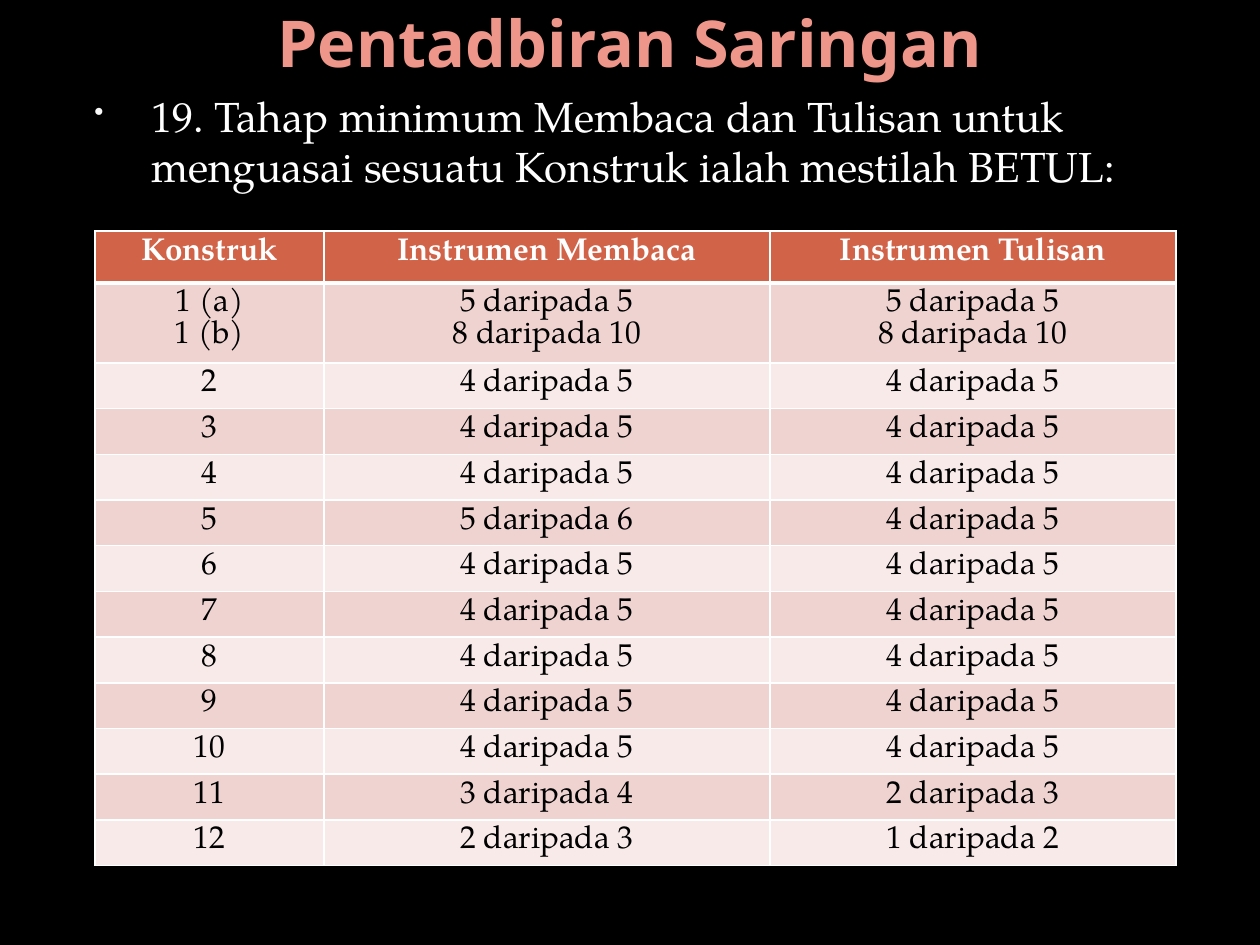
from lxml import etree
from pptx import Presentation
from pptx import util as u
from pptx.dml.color import RGBColor
from pptx.enum import text
from pptx.oxml.ns import qn

# Content
TITLE = "Pentadbiran Saringan"
BODY = ("19. Tahap minimum Membaca dan Tulisan untuk menguasai "
        "sesuatu Konstruk ialah mestilah BETUL:")
ROWS = [
    ("Konstruk", "Instrumen Membaca", "Instrumen Tulisan"),
    ("1 (a)\n1 (b)", "5 daripada 5\n8 daripada 10", "5 daripada 5\n8 daripada 10"),
    ("2", "4 daripada 5", "4 daripada 5"),
    ("3", "4 daripada 5", "4 daripada 5"),
    ("4", "4 daripada 5", "4 daripada 5"),
    ("5", "5 daripada 6", "4 daripada 5"),
    ("6", "4 daripada 5", "4 daripada 5"),
    ("7", "4 daripada 5", "4 daripada 5"),
    ("8", "4 daripada 5", "4 daripada 5"),
    ("9", "4 daripada 5", "4 daripada 5"),
    ("10", "4 daripada 5", "4 daripada 5"),
    ("11", "3 daripada 4", "2 daripada 3"),
    ("12", "2 daripada 3", "1 daripada 2"),
]

# Style
COLORS = {"background": "000000", "title": "EE968A", "white": "FFFFFF",
          "bullet": "F9F9F9", "header": "D16349", "cell_text": "000000",
          "odd": "EED3D0", "even": "F7EAE9"}
TITLE_FONT, BODY_FONT = "Noto Sans", "TeX Gyre Pagella"

# Layout in px
PX = u.Inches(1) / 126
TITLE_BOX = (63, 0, 1134, 84)
BODY_BOX = (63, 84, 1113, 199)
TABLE_LEFT, TABLE_TOP = 95, 231
COLUMNS = (229, 446, 406)
HEADER_H, FIRST_H, REST_H = 52, 80, 503
TEXT_INDENT, BULLET_HANG = 76, 57


def px(n):
    return u.Emu(round(n * PX))


def rgb(name):
    return RGBColor.from_string(COLORS[name])


def set_font(p, name, size, color, bold=False):
    f = p.font
    f.name, f.size, f.bold = name, u.Pt(size), bold
    f.color.rgb = rgb(color)


def add_text(slide, box, words):
    tf = slide.shapes.add_textbox(*map(px, box)).text_frame
    tf.word_wrap = True
    tf.text = words
    return tf, tf.paragraphs[0]


def set_borders(cell, widths):
    tc_pr = cell._tc.get_or_add_tcPr()
    for i, (side, width) in enumerate(widths.items()):
        ln = etree.Element(qn(f"a:ln{side}"), w=str(u.Pt(width)))
        fill = etree.SubElement(ln, qn("a:solidFill"))
        etree.SubElement(fill, qn("a:srgbClr"), val=COLORS["white"])
        tc_pr.insert(i, ln)


def add_bullet(p):
    p_pr = p._p.get_or_add_pPr()
    p_pr.set("marL", str(px(TEXT_INDENT)))
    p_pr.set("indent", str(-px(BULLET_HANG)))
    color = etree.Element(qn("a:buClr"))
    etree.SubElement(color, qn("a:srgbClr"), val=COLORS["bullet"])
    size = etree.Element(qn("a:buSzPct"), val="65000")
    char = etree.Element(qn("a:buChar"), char="•")
    at = list(p_pr).index(p_pr.find(qn("a:defRPr")))
    p_pr[at:at] = [color, size, char]


prs = Presentation()
prs.slide_width, prs.slide_height = px(1260), px(945)
s = prs.slides.add_slide(prs.slide_layouts[6])
s.background.fill.solid()
s.background.fill.fore_color.rgb = rgb("background")

# Title
tf, p = add_text(s, TITLE_BOX, TITLE)
tf.vertical_anchor = text.MSO_ANCHOR.MIDDLE
p.alignment = text.PP_ALIGN.CENTER
set_font(p, TITLE_FONT, 36.9, "title", bold=True)

# Bulleted statement
tf, p = add_text(s, BODY_BOX, BODY)
p.space_before = u.Pt(4.8)
set_font(p, BODY_FONT, 24, "white")
add_bullet(p)

# Table of minimum scores
rest = len(ROWS) - 2
heights = [HEADER_H, FIRST_H] + [REST_H / rest] * rest
table = s.shapes.add_table(len(ROWS), len(COLUMNS), px(TABLE_LEFT), px(TABLE_TOP),
                           px(sum(COLUMNS)), px(sum(heights))).table
for column, width in zip(table.columns, COLUMNS):
    column.width = px(width)
for r, (values, height) in enumerate(zip(ROWS, heights)):
    table.rows[r].height = px(height)
    header = r == 0
    fill = "header" if header else "odd" if r % 2 else "even"
    for c, value in enumerate(values):
        cell = table.cell(r, c)
        cell.text = value
        cell.fill.solid()
        cell.fill.fore_color.rgb = rgb(fill)
        set_borders(cell, {"L": 1, "R": 1, "T": 3 if r == 1 else 1,
                           "B": 3 if header else 1})
        for p in cell.text_frame.paragraphs:
            p.alignment = text.PP_ALIGN.CENTER
            p.line_spacing = u.Pt(18)
            set_font(p, BODY_FONT, 18, "white" if header else "cell_text", header)

prs.save("out.pptx")
